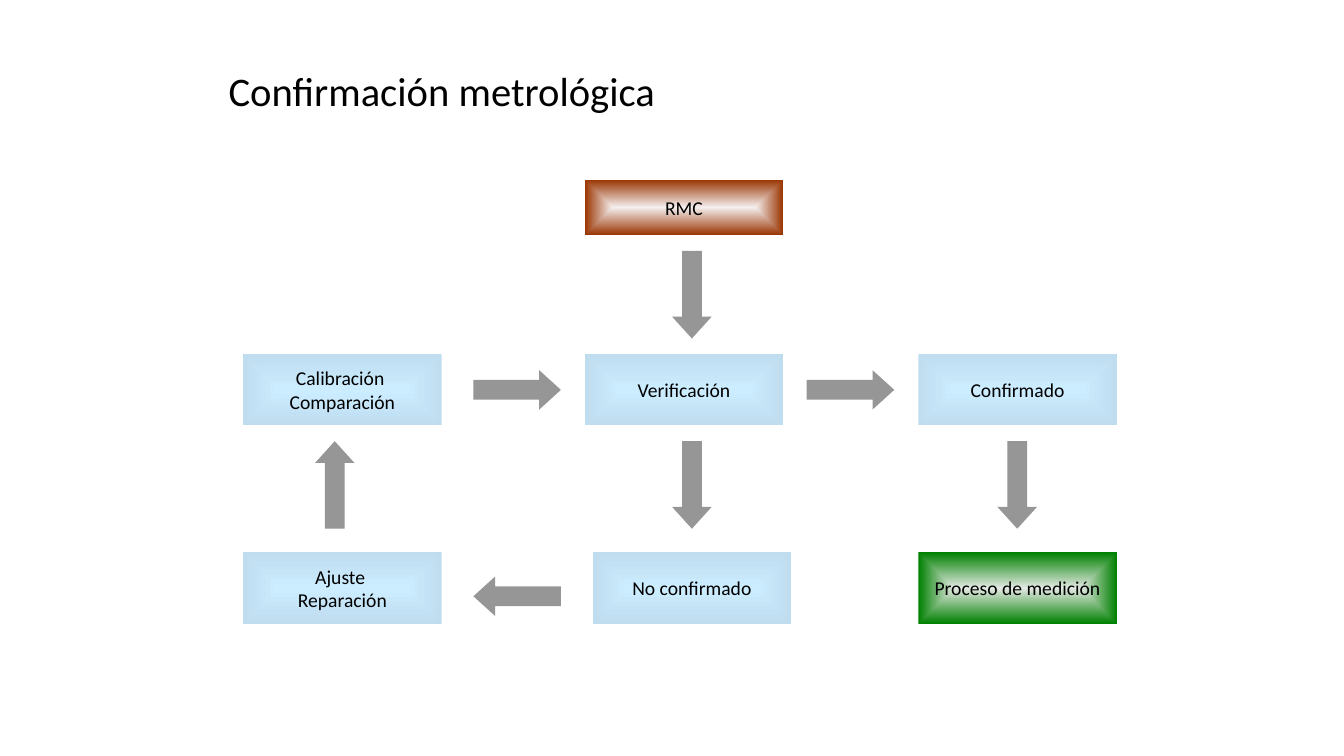
"""Builds the metrological confirmation flowchart slide."""
from lxml import etree
from pptx import Presentation
from pptx import util as u
from pptx.dml.color import RGBColor
from pptx.enum import shapes, text
from pptx.oxml import ns, parse_xml

COLORS = {
    "text": "000000", "arrow": "969696",
    "blue_center": "CCECFF", "blue_edge": "BFDDEF",
    "red_center": "F4EFEE", "red_edge": "993300",
    "green_center": "E3E9E3", "green_edge": "008000",
}
CENTER_PATH = (
    f'<a:path {ns.nsdecls("a")} path="shape">'
    '<a:fillToRect l="50000" t="50000" r="50000" b="50000"/></a:path>'
)


def write_text(shape, lines, size, align, spacing=1.0, wrap=False):
    frame = shape.text_frame
    frame.word_wrap = wrap
    frame.vertical_anchor = text.MSO_ANCHOR.MIDDLE
    frame.text = lines
    for paragraph in frame.paragraphs:
        paragraph.alignment = align
        paragraph.line_spacing = spacing
        paragraph.font.name = "Calibri"
        paragraph.font.size = u.Pt(size)
        paragraph.font.color.rgb = RGBColor.from_string(COLORS["text"])


presentation = Presentation()
presentation.slide_width, presentation.slide_height = u.Pt(960), u.Pt(540)
slide = presentation.slides.add_slide(presentation.slide_layouts[6])

title = slide.shapes.add_textbox(u.Pt(156.2), u.Pt(21.6), u.Pt(648), u.Pt(90))
write_text(title, "Confirmación metrológica", 29, text.PP_ALIGN.LEFT,
           spacing=0.9, wrap=True)

LEFT, MIDDLE, RIGHT = 173.7, 417.7, 656
TOP_ROW, CHECK_ROW, RESULT_ROW = 128.3, 252.8, 394.6
BOX_WIDTH, BOX_HEIGHT, TOP_HEIGHT = 141.8, 51, 39.7
boxes = [
    ("RMC", MIDDLE, TOP_ROW, TOP_HEIGHT, "red"),
    ("Calibración \nComparación", LEFT, CHECK_ROW, BOX_HEIGHT, "blue"),
    ("Verificación", MIDDLE, CHECK_ROW, BOX_HEIGHT, "blue"),
    ("Confirmado", RIGHT, CHECK_ROW, BOX_HEIGHT, "blue"),
    ("Ajuste \nReparación", LEFT, RESULT_ROW, BOX_HEIGHT, "blue"),
    ("No confirmado", MIDDLE + 5.7, RESULT_ROW, BOX_HEIGHT, "blue"),
    ("Proceso de medición", RIGHT, RESULT_ROW, BOX_HEIGHT, "green"),
]
for label, left, top, height, color in boxes:
    box = slide.shapes.add_shape(shapes.MSO_SHAPE.RECTANGLE, u.Pt(left), u.Pt(top),
                                 u.Pt(BOX_WIDTH), u.Pt(height))
    box.shadow.inherit = False
    box.line.fill.background()
    box.fill.gradient()
    for stop, part in zip(box.fill.gradient_stops, ("center", "edge")):
        stop.color.rgb = RGBColor.from_string(COLORS[f"{color}_{part}"])
    gradient = box._element.spPr.find(ns.qn("a:gradFill"))
    gradient.replace(gradient.find(ns.qn("a:lin")), parse_xml(CENTER_PATH))
    write_text(box, label, 14, text.PP_ALIGN.CENTER)

ARROW_LENGTH, ARROW_WIDTH = 62.5, 28.2
arrows = [
    (494.2, 210.5, 90),
    (369.4, 278.5, 0),
    (607.5, 278.5, 0),
    (239.1, 346.4, 270),
    (494.2, 346.4, 90),
    (726.6, 346.4, 90),
    (369.4, 425.9, 180),
]
for center_x, center_y, rotation in arrows:
    arrow = slide.shapes.add_shape(
        shapes.MSO_SHAPE.RIGHT_ARROW,
        u.Pt(center_x - ARROW_LENGTH / 2), u.Pt(center_y - ARROW_WIDTH / 2),
        u.Pt(ARROW_LENGTH), u.Pt(ARROW_WIDTH))
    arrow.rotation = rotation
    arrow.adjustments[0], arrow.adjustments[1] = 0.5, 0.55
    arrow.shadow.inherit = False
    arrow.line.fill.background()
    arrow.fill.solid()
    arrow.fill.fore_color.rgb = RGBColor.from_string(COLORS["arrow"])

presentation.save("out.pptx")
